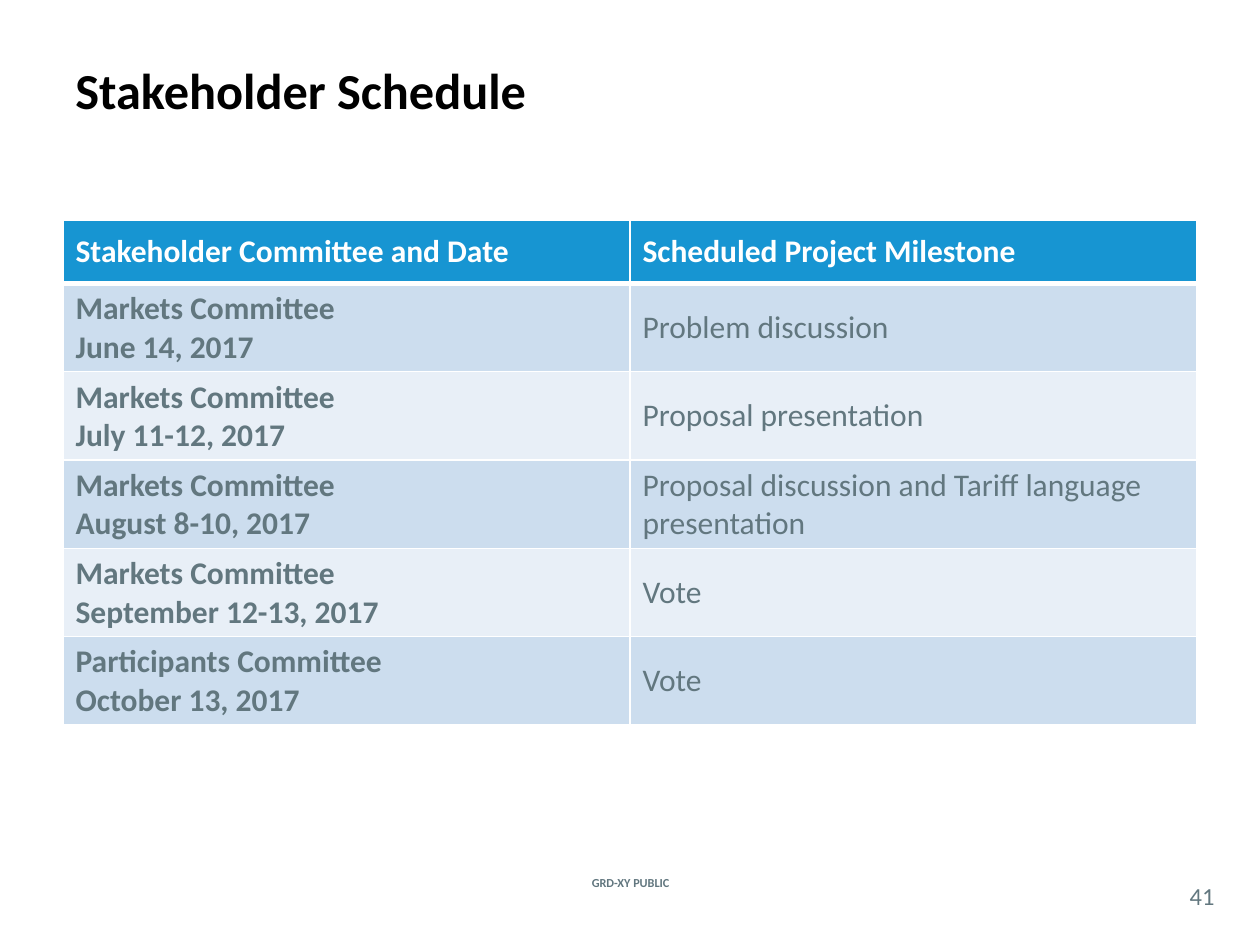
"""Build the stakeholder schedule slide."""
from lxml.etree import SubElement
from pptx import Presentation
from pptx.dml.color import RGBColor
from pptx.enum.text import MSO_ANCHOR, PP_ALIGN
from pptx.oxml.ns import qn
from pptx.util import Inches, Pt

TITLE = "Stakeholder Schedule"
LABEL = "GRD-XY PUBLIC"
PAGE = "41"
HEAD = ("Stakeholder Committee and Date", "Scheduled Project Milestone")
ROWS = [
    ("Markets Committee\vJune 14, 2017", "Problem discussion"),
    ("Markets Committee\vJuly 11-12, 2017", "Proposal presentation"),
    ("Markets Committee\vAugust 8-10, 2017",
     "Proposal discussion and Tariff language presentation"),
    ("Markets Committee\nSeptember 12-13, 2017", "Vote"),
    ("Participants Committee\nOctober 13, 2017", "Vote"),
]


class Theme:
    font = "Calibri"
    title, body, page, label = 28.8, 18, 14, 7
    black, white, slate = "000000", "FFFFFF", "62777F"
    head, bands = "1795D2", ("CCDDEE", "E8EFF7")
    thin, thick = 1, 3


UNIT = Inches(0.5)
COLS, LINES = 20, 15


def grid(*cells):
    return [round(cell * UNIT) for cell in cells]


def write(frame, text, size=Theme.body, color=Theme.slate, bold=False,
          align=PP_ALIGN.LEFT):
    frame.text = text
    frame.word_wrap = True
    for para in frame.paragraphs:
        para.alignment = align
        for run in para.runs:
            font = run.font
            font.name, font.size, font.bold = Theme.font, Pt(size), bold
            font.color.rgb = RGBColor.from_string(color)


def label(slide, spot, text, inset=None, **style):
    frame = slide.shapes.add_textbox(*grid(*spot)).text_frame
    frame.vertical_anchor = MSO_ANCHOR.MIDDLE
    if inset is not None:
        frame.margin_left = frame.margin_right = inset
        frame.margin_top = frame.margin_bottom = inset
    write(frame, text, **style)


def border(cell, base):
    props = cell._tc.get_or_add_tcPr()
    for side in "LRTB":
        width = base if side == "B" else Theme.thin
        line = SubElement(props, qn(f"a:ln{side}"), w=str(Pt(width)))
        fill = SubElement(line, qn("a:solidFill"))
        SubElement(fill, qn("a:srgbClr"), val=Theme.white)


def schedule(slide):
    left, top, width, height = grid(1, 3.5, COLS - 2, 8)
    shape = slide.shapes.add_table(
        len(ROWS) + 1, len(HEAD), left, top, width, height)
    table = shape.table
    table.rows[0].height = UNIT
    for i, texts in enumerate([HEAD, *ROWS]):
        first = i == 0
        if not first:
            table.rows[i].height = (height - UNIT) // len(ROWS)
        tint = Theme.head if first else Theme.bands[(i - 1) % 2]
        for j, text in enumerate(texts):
            cell = table.cell(i, j)
            border(cell, Theme.thick if first else Theme.thin)
            cell.fill.solid()
            cell.fill.fore_color.rgb = RGBColor.from_string(tint)
            middle = first or j > 0
            cell.vertical_anchor = MSO_ANCHOR.MIDDLE if middle else MSO_ANCHOR.TOP
            write(cell.text_frame, text, bold=first or j == 0,
                  color=Theme.white if first else Theme.slate)


def main():
    deck = Presentation()
    deck.slide_width, deck.slide_height = grid(COLS, LINES)
    slide = deck.slides.add_slide(deck.slide_layouts[6])
    label(slide, (8.54, 13.84, 2.94, 0.34), LABEL, size=Theme.label,
          bold=True, align=PP_ALIGN.CENTER)
    label(slide, (1, 0.84, COLS - 2, 1.16), TITLE, size=Theme.title,
          color=Theme.black, bold=True)
    label(slide, (18.66, 13.92, 0.84, 0.58), PAGE, inset=0,
          size=Theme.page, align=PP_ALIGN.CENTER)
    schedule(slide)
    deck.save("out.pptx")


if __name__ == "__main__":
    main()
